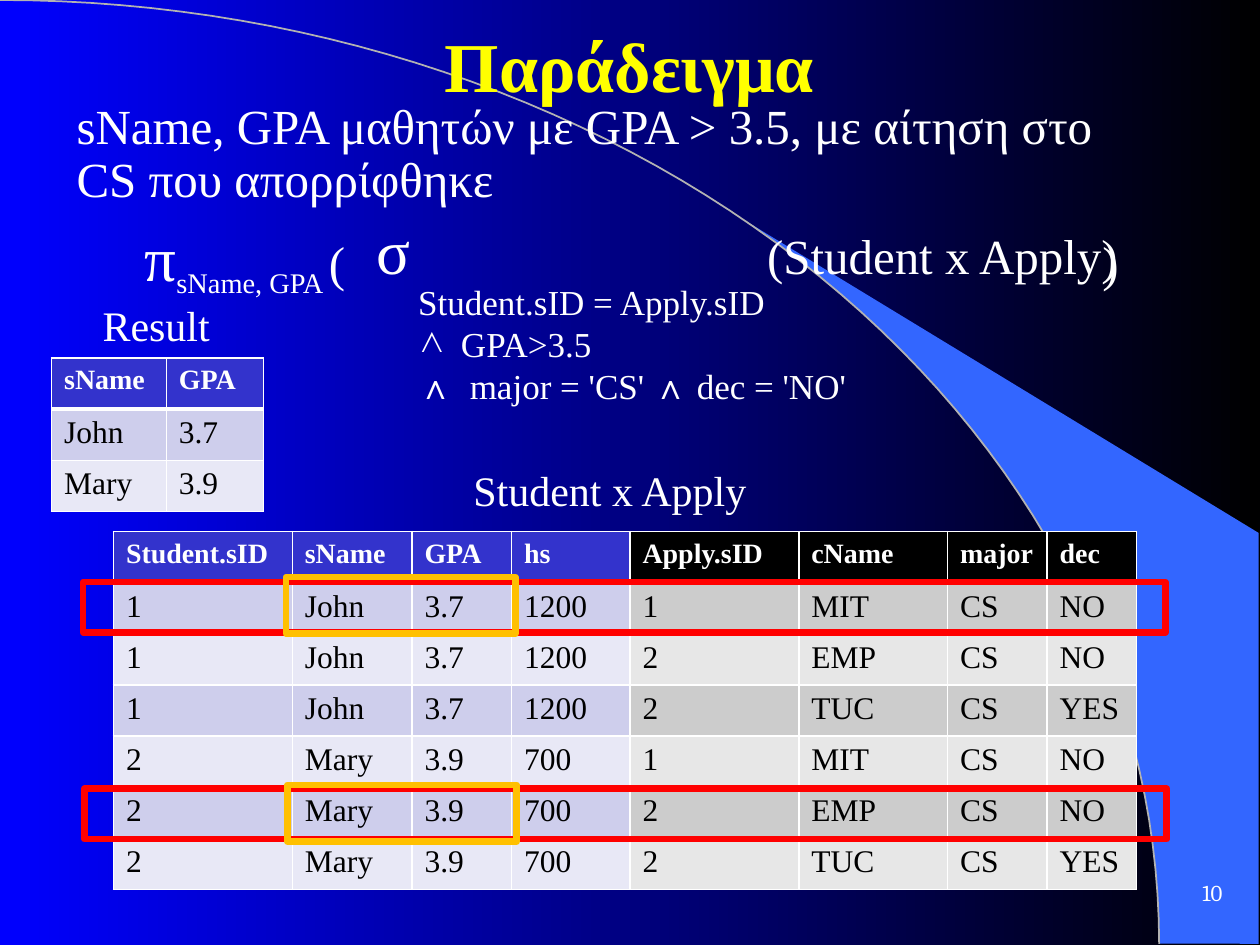
import math
import pptx
import pptx.util
import pptx.dml.color
import pptx.enum.shapes
import pptx.enum.text
import pptx.oxml
import pptx.oxml.ns
from pptx.util import Inches

ALIGN = pptx.enum.text.PP_ALIGN
ANCHOR = pptx.enum.text.MSO_ANCHOR
WHITE, BLACK, BLUE = "FFFFFF", "000000", "3333CC"
RED, GOLD = "FF0000", "FFC000"


def color(code):
    return pptx.dml.color.RGBColor.from_string(code)


def node(xml):
    """Parse one DrawingML element."""
    space = pptx.oxml.ns.nsdecls("a")
    return pptx.oxml.parse_xml(xml.replace(">", f" {space}>", 1))


class Deck:
    def __init__(self, slide, font="Times New Roman"):
        self.slide = slide
        self.font = font

    def ground(self, first, last):
        fill = self.slide.background.fill
        fill.gradient()
        fill.gradient_angle = 0
        for stop, code in zip(fill.gradient_stops, (first, last)):
            stop.color.rgb = color(code)

    def outline(self, points, fill=None, line=None):
        """Draw a closed filled shape, or an open line."""
        spots = [(Inches(x), Inches(y)) for x, y in points]
        pen = self.slide.shapes.build_freeform(*spots[0], scale=1.0)
        pen.add_line_segments(spots[1:], close=fill is not None)
        shape = pen.convert_to_shape()
        shape.shadow.inherit = False
        if fill:
            shape.fill.solid()
            shape.fill.fore_color.rgb = color(fill)
            shape.line.fill.background()
        else:
            shape.fill.background()
            shape.line.color.rgb = color(line)
            shape.line.width = pptx.util.Pt(1)

    def style(self, run, size, code=WHITE, bold=False, font=None):
        run.font.size = pptx.util.Pt(size)
        run.font.name = font or self.font
        run.font.bold = bold
        run.font.color.rgb = color(code)

    def text(self, box, words, size, align=ALIGN.LEFT, anchor=ANCHOR.TOP, **look):
        shape = self.slide.shapes.add_textbox(*map(Inches, box))
        frame = shape.text_frame
        frame.word_wrap = True
        frame.vertical_anchor = anchor
        frame.text = words
        for para in frame.paragraphs:
            para.alignment = align
            for run in para.runs:
                self.style(run, size, **look)
        return frame

    def tabs(self, para, *stops):
        marks = "".join(f'<a:tab pos="{Inches(s)}" algn="l"/>' for s in stops)
        para._p.get_or_add_pPr().append(node(f"<a:tabLst>{marks}</a:tabLst>"))

    def bullet(self, para, sign, indent):
        props = para._p.get_or_add_pPr()
        props.set("marL", str(Inches(indent)))
        props.set("indent", str(-Inches(indent)))
        props.append(node(f'<a:buChar char="{sign}"></a:buChar>'))

    def runs(self, para, parts):
        """Add (text, size, baseline percent) parts to a paragraph."""
        for words, size, base in parts:
            run = para.add_run()
            run.text = words
            self.style(run, size)
            if base:
                run._r.get_or_add_rPr().set("baseline", str(base * 1000))

    def frame(self, box, code):
        kind = pptx.enum.shapes.MSO_SHAPE.RECTANGLE
        shape = self.slide.shapes.add_shape(kind, *map(Inches, box))
        shape.shadow.inherit = False
        shape.fill.background()
        shape.line.color.rgb = color(code)
        shape.line.width = pptx.util.Pt(3.75)

    def edges(self, cell, top, bottom):
        props = cell._tc.get_or_add_tcPr()
        for i, (side, width) in enumerate(
            (("L", 1), ("R", 1), ("T", top), ("B", bottom))
        ):
            props.insert(i, node(
                f'<a:ln{side} w="{pptx.util.Pt(width)}"><a:solidFill>'
                f'<a:srgbClr val="{WHITE}"/></a:solidFill></a:ln{side}>'))

    def table(self, left, top, height, widths, rows, head, bands):
        box = map(Inches, (left, top, sum(widths), height))
        grid = self.slide.shapes.add_table(len(rows), len(widths), *box).table
        for col, width in zip(grid.columns, widths):
            col.width = Inches(width)
        for r, row in enumerate(rows):
            for c, words in enumerate(row.split()):
                cell = grid.cell(r, c)
                cell.text = words
                cell.fill.solid()
                cell.fill.fore_color.rgb = color(bands[(r - 1) % 2] if r else head)
                self.edges(cell, 3 if r == 1 else 1, 1 if r else 3)
                run = cell.text_frame.paragraphs[0].runs[0]
                self.style(run, 18 if r else 16, BLACK if r else WHITE, bold=not r)


def arc(start, steps=60):
    """Points of the quarter ellipse from a start angle to its right end."""
    turns = [start + (math.pi / 2 - start) * i / steps for i in range(steps + 1)]
    return [(9.2 * math.sin(t), 7.49 * (1 - math.cos(t))) for t in turns]


def main():
    prs = pptx.Presentation()
    prs.slide_width, prs.slide_height = Inches(10), Inches(7.5)
    deck = Deck(prs.slides.add_slide(prs.slide_layouts[6]))

    deck.ground("0000FF", BLACK)
    deck.outline(arc(math.asin(5.89 / 9.2)) + [(9.99, 7.49), (9.99, 4.23)],
                 fill="3366FF")
    deck.outline(arc(0), line="B2B2B2")
    deck.text((9.24, 6.83, 0.56, 0.5), "10", 13, ALIGN.RIGHT, ANCHOR.MIDDLE,
              font="Cambria")

    body = deck.text(
        (0.51, 0.76, 8.66, 1.7),
        "sName, GPA μαθητών με GPA > 3.5, με αίτηση στο CS που απορρίφθηκε", 28)
    body.paragraphs[0].line_spacing = 0.9
    select = body.add_paragraph()
    select.space_before = pptx.util.Pt(7.2)
    deck.tabs(select, 2.38, 5.48)
    deck.runs(select, [("\tσ", 36, 0), ("\t(Student x Apply)", 28, 0)])

    project = deck.text((0.55, 1.72, 8.66, 0.7), "", 28).paragraphs[0]
    deck.tabs(project, 0.5, 8.1)
    deck.runs(project, [("\tπ", 36, 0), ("sName, GPA ", 28, -25), ("(\t)", 28, 0)])
    for para in (select, project):
        para.line_spacing = 0.9

    deck.text((0.7, 0, 8.59, 1.02), "Παράδειγμα", 40, ALIGN.CENTER,
              ANCHOR.MIDDLE, code="FFFF00", bold=True)
    terms = deck.text(
        (3.22, 2.18, 5.09, 1.11),
        "Student.sID = Apply.sID\nGPA>3.5\n∧\tmajor = 'CS' ∧ dec = 'NO'", 20)
    deck.bullet(terms.paragraphs[1], "∧", 0.34)
    deck.tabs(terms.paragraphs[2], 0.41)
    deck.text((3.03, 3.64, 3.62, 0.51), "Student x Apply", 24, ALIGN.CENTER)

    lilac, gray = ("CECEEC", "E8E8F6"), ("CCCCCC", "E7E7E7")
    john, mary = "1 John 3.7 1200", "2 Mary 3.9 700"
    deck.table(0.9, 4.22, 2.84, (1.42, 0.95, 0.79, 0.94),
               ["Student.sID sName GPA hs"] + [john] * 3 + [mary] * 3, BLUE, lilac)
    apply = ["1 MIT CS NO", "2 EMP CS NO", "2 TUC CS YES"]
    deck.table(5, 4.22, 2.84, (1.34, 1.18, 0.79, 0.71),
               ["Apply.sID cName major dec"] + apply * 2, BLACK, gray)

    for x, y, width, height, code in (
        (0.66, 4.62, 8.59, 0.4, RED),
        (0.67, 6.26, 8.59, 0.4, RED),
        (2.27, 4.58, 1.82, 0.45, GOLD),
        (2.28, 6.23, 1.82, 0.45, GOLD),
    ):
        deck.frame((x, y, width, height), code)

    deck.table(0.41, 2.84, 1.22, (0.91, 0.77),
               ["sName GPA", "John 3.7", "Mary 3.9"], BLUE, lilac)
    deck.text((0.49, 2.33, 1.5, 0.51), "Result", 24, ALIGN.CENTER)
    prs.save("out.pptx")


if __name__ == "__main__":
    main()
